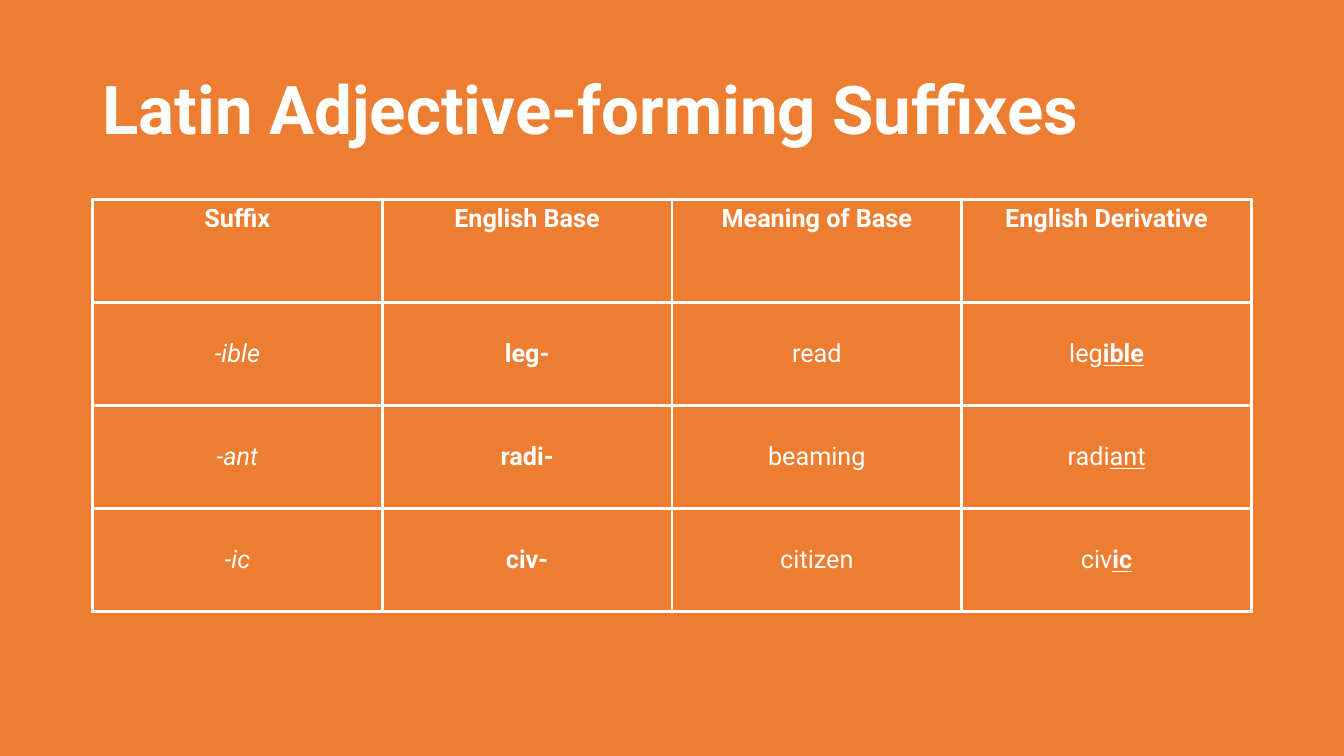
from lxml import etree
from pptx import Presentation
from pptx import util as u
from pptx.dml.color import RGBColor
from pptx.enum import text
from pptx.oxml import ns

COLORS = {"background": "ED7D31", "ink": "FFFFFF"}
PLAIN, BOLD, ITALIC = {}, {"bold": True}, {"italic": True}
UNDERLINE = {"underline": True}
HEADERS = ["Suffix", "English Base", "Meaning of Base", "English Derivative"]
WORDS = [
    ("ible", "leg", "read", BOLD | UNDERLINE),
    ("ant", "radi", "beaming", UNDERLINE),
    ("ic", "civ", "citizen", BOLD | UNDERLINE),
]


class SlideBuilder:
    """Adds elements in one shared style to the current slide."""

    def __init__(self, s):
        self.s = s
        self.font = "Roboto"
        self.border = u.Pt(2.25)

    def background(self):
        fill = self.s.background.fill
        fill.solid()
        fill.fore_color.rgb = RGBColor.from_string(COLORS["background"])

    def add_runs(self, p, runs, size):
        for content, style in runs:
            r = p.add_run()
            r.text = content
            values = {"name": self.font, "size": u.Pt(size)} | style
            for name, value in values.items():
                setattr(r.font, name, value)
            r.font.color.rgb = RGBColor.from_string(COLORS["ink"])

    def title(self, content, left, top, width, height):
        sp = self.s.shapes.add_textbox(*map(u.Cm, (left, top, width, height)))
        tf = sp.text_frame
        tf.word_wrap = True
        tf.vertical_anchor = text.MSO_ANCHOR.MIDDLE
        p = tf.paragraphs[0]
        p.line_spacing = 0.9
        self.add_runs(p, [(content, BOLD)], 48)

    def outline(self, cell):
        tcPr = cell._tc.get_or_add_tcPr()
        for i, side in enumerate(("lnL", "lnR", "lnT", "lnB")):
            ln = etree.Element(ns.qn(f"a:{side}"), w=str(self.border))
            fill = etree.SubElement(ln, ns.qn("a:solidFill"))
            etree.SubElement(fill, ns.qn("a:srgbClr"), val=COLORS["ink"])
            tcPr.insert(i, ln)

    def table(self, rows, left, top, width, height):
        size = map(u.Cm, (left, top, width, height))
        tbl = self.s.shapes.add_table(len(rows), len(rows[0]), *size).table
        tbl.horz_banding = False
        for i, row in enumerate(rows):
            for j, runs in enumerate(row):
                cell = tbl.cell(i, j)
                cell.fill.background()
                self.outline(cell)
                if i:
                    cell.vertical_anchor = text.MSO_ANCHOR.MIDDLE
                p = cell.text_frame.paragraphs[0]
                p.alignment = text.PP_ALIGN.CENTER
                self.add_runs(p, runs, 18)


def main():
    prs = Presentation()
    prs.slide_width, prs.slide_height = u.Cm(33.87), u.Cm(19.05)
    b = SlideBuilder(prs.slides.add_slide(prs.slide_layouts[6]))
    b.background()
    b.title("Latin Adjective-forming Suffixes", 2.33, 1.01, 29.21, 3.68)
    rows = [[[(header, BOLD)] for header in HEADERS]]
    for suffix, base, meaning, ending in WORDS:
        rows.append([
            [(f"-{suffix}", ITALIC)],
            [(f"{base}-", BOLD)],
            [(meaning, PLAIN)],
            [(base, PLAIN), (suffix, ending)],
        ])
    b.table(rows, 2.33, 5.03, 29.21, 10.38)
    prs.save("out.pptx")


if __name__ == "__main__":
    main()
